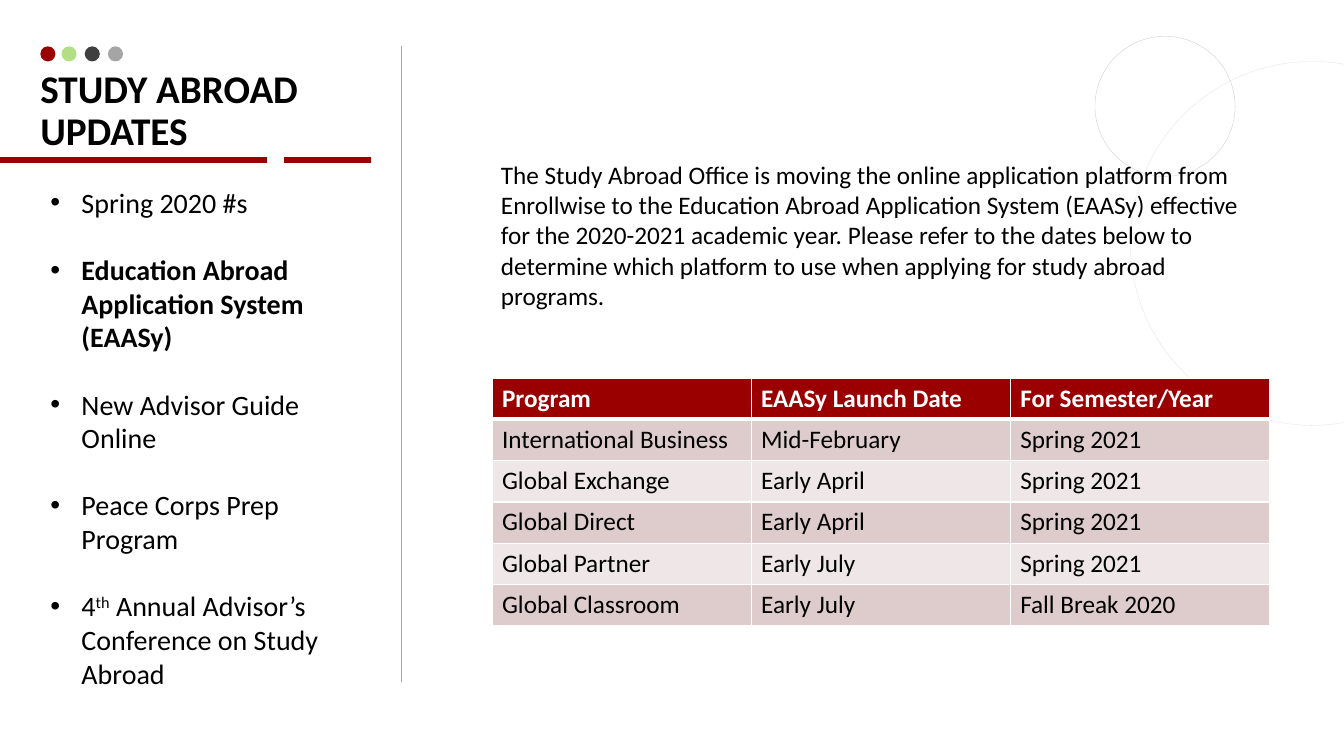
from lxml import etree
from pptx import Presentation
from pptx import util as u
from pptx.dml.color import RGBColor
from pptx.enum import shapes, text
from pptx.oxml import ns

PX = 9144  # EMU in one px, 100 px to the inch
FONT = "Calibri"
HUES = {
    "red": "9A0000", "green": "92D050", "dark": "3F3F3F", "gray": "A5A5A5",
    "rule": "A6A6A6", "ring": "D0CECE", "pale": "E7E6E6",
    "black": "000000", "white": "FFFFFF", "odd": "DECCCC", "even": "EFE7E7",
}
TOPICS = [
    [("Spring 2020 #s", {})],
    [("Education Abroad Application System (EAASy)", {"bold": True})],
    [("New Advisor Guide Online", {})],
    [("Peace Corps Prep Program", {})],
    [("4", {}), ("th", {"base": 30000}),
     (" Annual Advisor’s Conference on Study Abroad", {})],
]
INTRO = (
    "The Study Abroad Office is moving the online application platform from "
    "Enrollwise to the Education Abroad Application System (EAASy) effective "
    "for the 2020-2021 academic year. Please refer to the dates below to "
    "determine which platform to use when applying for study abroad programs."
)
DATES = [
    ("Program", "EAASy Launch Date", "For Semester/Year"),
    ("International Business", "Mid-February", "Spring 2021"),
    ("Global Exchange", "Early April", "Spring 2021"),
    ("Global Direct", "Early April", "Spring 2021"),
    ("Global Partner", "Early July", "Spring 2021"),
    ("Global Classroom", "Early July", "Fall Break 2020"),
]


def hue(name):
    return RGBColor.from_string(HUES[name])


def px(*vals):
    return [u.Emu(v * PX) for v in vals]


def sub(node, tag, **attrs):
    return etree.SubElement(node, ns.qn(tag), attrs)


def style(item, **vals):
    for key, val in vals.items():
        setattr(item, key, val)


def put(para, words, size, color="black", bold=False, base=None):
    run = para.add_run()
    run.text = words
    style(run.font, name=FONT, size=u.Pt(size), bold=bold)
    run.font.color.rgb = hue(color)
    if base:
        run.font._element.set("baseline", str(base))


def line(slide, ends, color, width):
    rule = slide.shapes.add_connector(shapes.MSO_CONNECTOR.STRAIGHT, *px(*ends))
    rule.line.color.rgb = hue(color)
    rule.line.width = u.Pt(width)
    sub(rule._element.spPr, "a:effectLst")


def oval(slide, left, top, size, fill=None, edge=None, alpha=None):
    disc = slide.shapes.add_shape(
        shapes.MSO_SHAPE.OVAL, *px(left, top, size, size))
    disc.shadow.inherit = False
    if fill:
        disc.fill.solid()
        disc.fill.fore_color.rgb = hue(fill)
    else:
        disc.fill.background()
    if edge:
        disc.line.color.rgb = hue(edge)
        disc.line.width = u.Pt(0.25)
    else:
        disc.line.fill.background()
    if alpha:
        tone = disc._element.spPr.find(".//" + ns.qn("a:srgbClr"))
        sub(tone, "a:alpha", val=str(alpha * 1000))


def head(slide, box, words):
    title = slide.shapes.title
    style(title, **dict(zip(("left", "top", "width", "height"), px(*box))))
    frame = title.text_frame
    style(frame, margin_left=0, margin_top=0, margin_right=0, margin_bottom=0,
          word_wrap=True, auto_size=text.MSO_AUTO_SIZE.NONE,
          vertical_anchor=text.MSO_ANCHOR.BOTTOM)
    para = frame.paragraphs[0]
    style(para, alignment=text.PP_ALIGN.LEFT, line_spacing=0.9)
    put(para, words, 28, bold=True)


def note(slide, box):
    frame = slide.shapes.add_textbox(*px(*box)).text_frame
    style(frame, word_wrap=True, auto_size=text.MSO_AUTO_SIZE.SHAPE_TO_FIT_TEXT)
    return frame


def topics(slide, box):
    frame = note(slide, box)
    for n, parts in enumerate(TOPICS):
        para = frame.add_paragraph() if n else frame.paragraphs[0]
        if n:
            para.space_before = u.Pt(24)
        props = para._p.get_or_add_pPr()
        indent = 31 * PX
        props.set("marL", str(indent))
        props.set("indent", str(-indent))
        sub(props, "a:buFont", typeface="Arial")
        sub(props, "a:buChar", char="•")
        for words, look in parts:
            put(para, words, 20, **look)


def edge(cell, side, width):
    rim = sub(cell._tc.get_or_add_tcPr(), "a:ln" + side, w=str(u.Pt(width)))
    sub(sub(rim, "a:solidFill"), "a:srgbClr", val=HUES["white"])


def dates(slide, left, top, wide, high):
    rows, cols = len(DATES), len(DATES[0])
    grid = slide.shapes.add_table(
        rows, cols, *px(left, top, wide * cols, high * rows)).table
    for r, row in enumerate(DATES):
        for c, words in enumerate(row):
            cell = grid.cell(r, c)
            # The rule under the header row is thicker
            for side, width in (("L", 1), ("R", 1), ("T", 3 if r == 1 else 1),
                                ("B", 3 if r == 0 else 1)):
                edge(cell, side, width)
            fill = "red" if r == 0 else "odd" if r % 2 else "even"
            cell.fill.solid()
            cell.fill.fore_color.rgb = hue(fill)
            put(cell.text_frame.paragraphs[0], words, 18,
                "black" if r else "white", r == 0)


def main():
    deck = Presentation()
    deck.slide_width, deck.slide_height = px(1333, 750)
    slide = deck.slides.add_slide(deck.slide_layouts[5])

    # Rules
    line(slide, (-3, 159, 265, 159), "red", 4.5)
    line(slide, (282, 159, 368, 159), "red", 4.5)
    line(slide, (398, 677, 398, 46), "rule", 0.5)

    # Rings and dots
    oval(slide, 1121, 61, 361, edge="pale")
    oval(slide, 1086, 36, 139, edge="ring")
    for left, fill, alpha in ((40, "red", None), (61, "green", 70),
                              (84, "dark", None), (107, "gray", None)):
        oval(slide, left, 46, 15, fill, alpha=alpha)

    # Title and text
    head(slide, (40, 56, 351, 97), "STUDY ABROAD UPDATES")
    topics(slide, (40, 179, 321, 515))
    put(note(slide, (487, 153, 772, 162)).paragraphs[0], INTRO, 18)

    # Launch dates
    dates(slide, 488, 375, 257, 41)
    deck.save("out.pptx")


if __name__ == "__main__":
    main()
